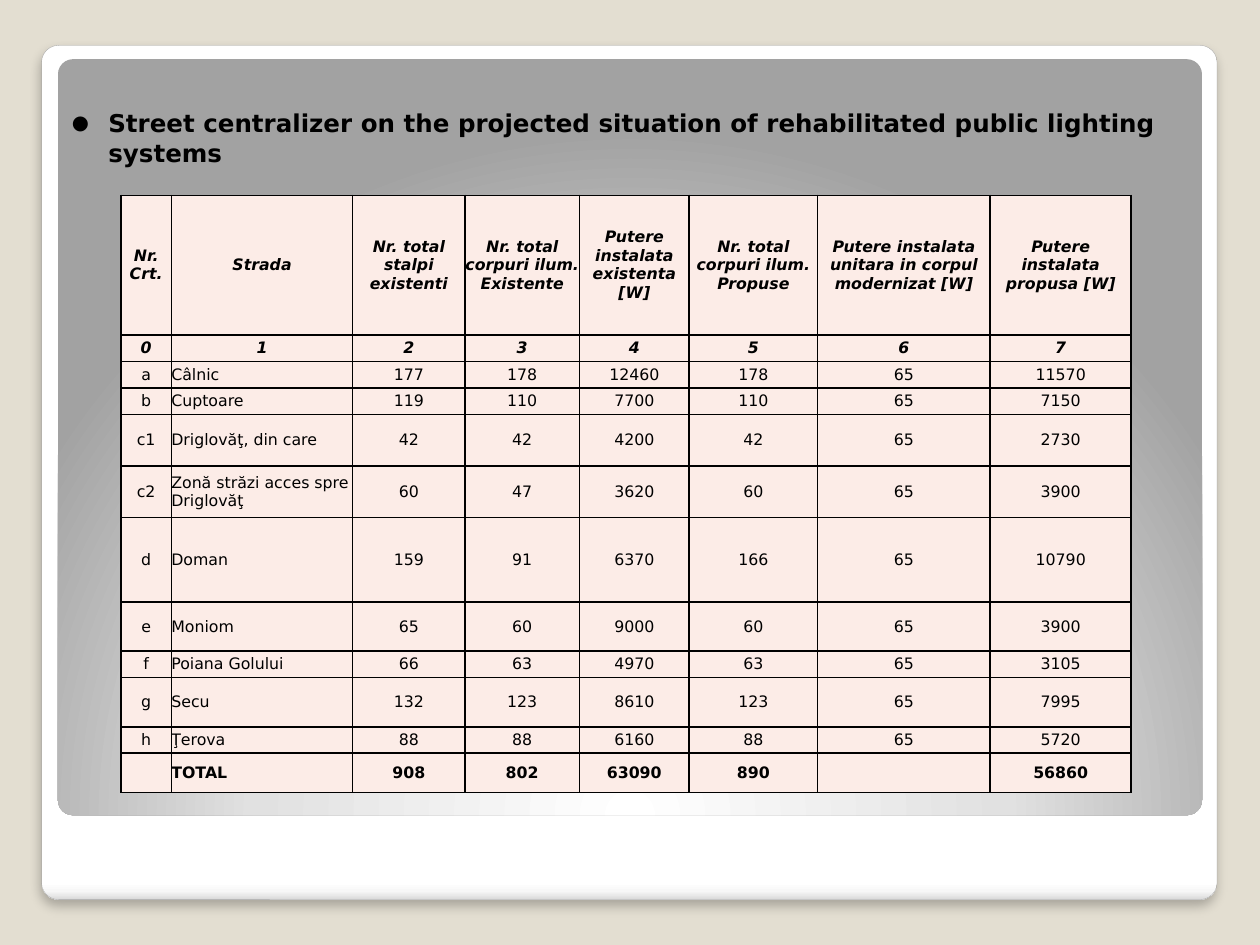
from pptx import Presentation
from pptx.dml.color import RGBColor
from pptx.enum.shapes import MSO_SHAPE
from pptx.enum.text import MSO_ANCHOR, PP_ALIGN
from pptx.oxml import parse_xml
from pptx.oxml.ns import nsdecls
from pptx.util import Inches, Pt

FONT = "DejaVu Sans"
BLACK = RGBColor(0x00, 0x00, 0x00)
WHITE = RGBColor(0xFF, 0xFF, 0xFF)
SAND = RGBColor(0xE3, 0xDE, 0xD1)
BLUSH = RGBColor(0xFC, 0xEC, 0xE7)
MIST = RGBColor(0xF7, 0xF7, 0xF7)
SILVER = RGBColor(0xDA, 0xDA, 0xDA)
PEARL = RGBColor(0xE1, 0xE1, 0xE1)
GREY = RGBColor(0xA2, 0xA2, 0xA2)
EDGE = RGBColor(0xA4, 0xA4, 0xA4)

TITLE = ("Street centralizer on the projected situation of "
         "rehabilitated public lighting systems")
COLUMN_WIDTHS = [0.4, 1.44, 0.89, 0.91, 0.87, 1.02, 1.37, 1.12]
ROW_HEIGHTS = [1.11, 0.21, 0.21, 0.21, 0.41, 0.41, 0.67, 0.39, 0.21, 0.39, 0.21, 0.31]
HEADINGS = ["Nr. Crt.", "Strada", "Nr. total stalpi existenti",
            "Nr. total corpuri ilum. Existente", "Putere instalata existenta [W]",
            "Nr. total corpuri ilum. Propuse",
            "Putere instalata unitara in corpul modernizat [W]",
            "Putere instalata propusa [W]"]
STREETS = [
    ["a", "Câlnic", 177, 178, 12460, 178, 65, 11570],
    ["b", "Cuptoare", 119, 110, 7700, 110, 65, 7150],
    ["c1", "Driglovăţ, din care", 42, 42, 4200, 42, 65, 2730],
    ["c2", "Zonă străzi acces spre Driglovăţ", 60, 47, 3620, 60, 65, 3900],
    ["d", "Doman", 159, 91, 6370, 166, 65, 10790],
    ["e", "Moniom", 65, 60, 9000, 60, 65, 3900],
    ["f", "Poiana Golului", 66, 63, 4970, 63, 65, 3105],
    ["g", "Secu", 132, 123, 8610, 123, 65, 7995],
    ["h", "Ţerova", 88, 88, 6160, 88, 65, 5720],
]
TOTALS = ["", "TOTAL", 908, 802, 63090, 890, "", 56860]
STREET_COLUMN = 1
HEADER_ROWS = 2


def write(paragraph, text, *, size, bold=False, italic=False, align=PP_ALIGN.LEFT):
    paragraph.alignment = align
    run = paragraph.add_run()
    run.text = text
    font = run.font
    font.name, font.size, font.bold, font.italic = FONT, Pt(size), bold, italic
    font.color.rgb = BLACK


def add_panel(slide, left, top, width, height, stops, direction):
    """Add a rounded panel; stops are (percent, colour), direction is the gradient's XML."""
    panel = slide.shapes.add_shape(MSO_SHAPE.ROUNDED_RECTANGLE, Inches(left),
                                   Inches(top), Inches(width), Inches(height))
    panel.adjustments[0] = 0.02
    panel.shadow.inherit = False
    panel.line.fill.background()
    stop_xml = "".join(f'<a:gs pos="{percent * 1000}"><a:srgbClr val="{colour}"/></a:gs>'
                       for percent, colour in stops)
    panel.fill.background()
    properties = panel._element.spPr
    properties.replace(properties.find("{*}noFill"), parse_xml(
        f'<a:gradFill {nsdecls("a")} rotWithShape="1"><a:gsLst>{stop_xml}</a:gsLst>'
        f'{direction}</a:gradFill>'))
    return panel


def add_drop_shadow(panel):
    panel._element.spPr.find("{*}effectLst").append(parse_xml(
        f'<a:outerShdw {nsdecls("a")} blurRad="{Pt(6)}" dist="{Pt(4)}" dir="5400000" '
        f'algn="t" rotWithShape="0"><a:srgbClr val="{BLACK}"><a:alpha val="25000"/>'
        f'</a:srgbClr></a:outerShdw>'))


def add_bulleted_title(slide):
    title = slide.shapes.add_textbox(Inches(0.43), Inches(0.81), Inches(9.06), Inches(0.6))
    frame = title.text_frame
    frame.word_wrap = True
    frame.margin_left = Inches(0.14)
    paragraph = frame.paragraphs[0]
    properties = paragraph._p.get_or_add_pPr()
    properties.set("marL", str(Inches(0.29)))
    properties.set("indent", str(-Inches(0.29)))
    for bullet in (f'<a:buClr {nsdecls("a")}><a:srgbClr val="{BLACK}"/></a:buClr>',
                   f'<a:buSzPct {nsdecls("a")} val="80000"/>',
                   f'<a:buFont {nsdecls("a")} typeface="{FONT}"/>',
                   f'<a:buChar {nsdecls("a")} char="●"/>'):
        properties.append(parse_xml(bullet))
    write(paragraph, TITLE, size=14, bold=True)


def format_cell(cell):
    cell.margin_left = cell.margin_right = cell.margin_top = cell.margin_bottom = 0
    cell.vertical_anchor = MSO_ANCHOR.MIDDLE
    properties = cell._tc.get_or_add_tcPr()
    for side in ("lnL", "lnR", "lnT", "lnB"):
        properties.append(parse_xml(
            f'<a:{side} {nsdecls("a")} w="{Pt(1)}"><a:solidFill>'
            f'<a:srgbClr val="{BLACK}"/></a:solidFill></a:{side}>'))
    cell.fill.solid()
    cell.fill.fore_color.rgb = BLUSH


def add_street_table(slide):
    rows = [HEADINGS, list(range(len(HEADINGS))), *STREETS, TOTALS]
    table = slide.shapes.add_table(
        len(rows), len(HEADINGS), Inches(0.96), Inches(1.55),
        Inches(sum(COLUMN_WIDTHS)), Inches(sum(ROW_HEIGHTS))).table
    table.first_row = table.horz_banding = False
    for column, width in zip(table.columns, COLUMN_WIDTHS):
        column.width = Inches(width)
    for r, (values, height) in enumerate(zip(rows, ROW_HEIGHTS)):
        table.rows[r].height = Inches(height)
        is_header = r < HEADER_ROWS
        for c, value in enumerate(values):
            cell = table.cell(r, c)
            format_cell(cell)
            if value == "":
                continue
            is_street = c == STREET_COLUMN and not is_header
            write(cell.text_frame.paragraphs[0], str(value), size=9,
                  bold=is_header or values is TOTALS, italic=is_header,
                  align=PP_ALIGN.LEFT if is_street else PP_ALIGN.CENTER)


def main():
    deck = Presentation()
    deck.slide_width, deck.slide_height = Inches(10), Inches(7.5)
    slide = deck.slides.add_slide(deck.slide_layouts[6])
    slide.background.fill.solid()
    slide.background.fill.fore_color.rgb = SAND

    card = add_panel(slide, 0.33, 0.36, 9.33, 6.78,
                     [(0, WHITE), (98, WHITE), (99, MIST), (100, SILVER)],
                     '<a:lin ang="5400000" scaled="0"/>')
    card.line.color.rgb = EDGE
    card.line.width = Pt(0.16)
    add_drop_shadow(card)
    add_panel(slide, 0.46, 0.47, 9.08, 6, [(0, WHITE), (55, PEARL), (100, GREY)],
              '<a:path path="circle"><a:fillToRect l="50000" t="175000" '
              'r="50000" b="-75000"/></a:path>')
    add_bulleted_title(slide)
    add_street_table(slide)
    deck.save("out.pptx")


if __name__ == "__main__":
    main()
